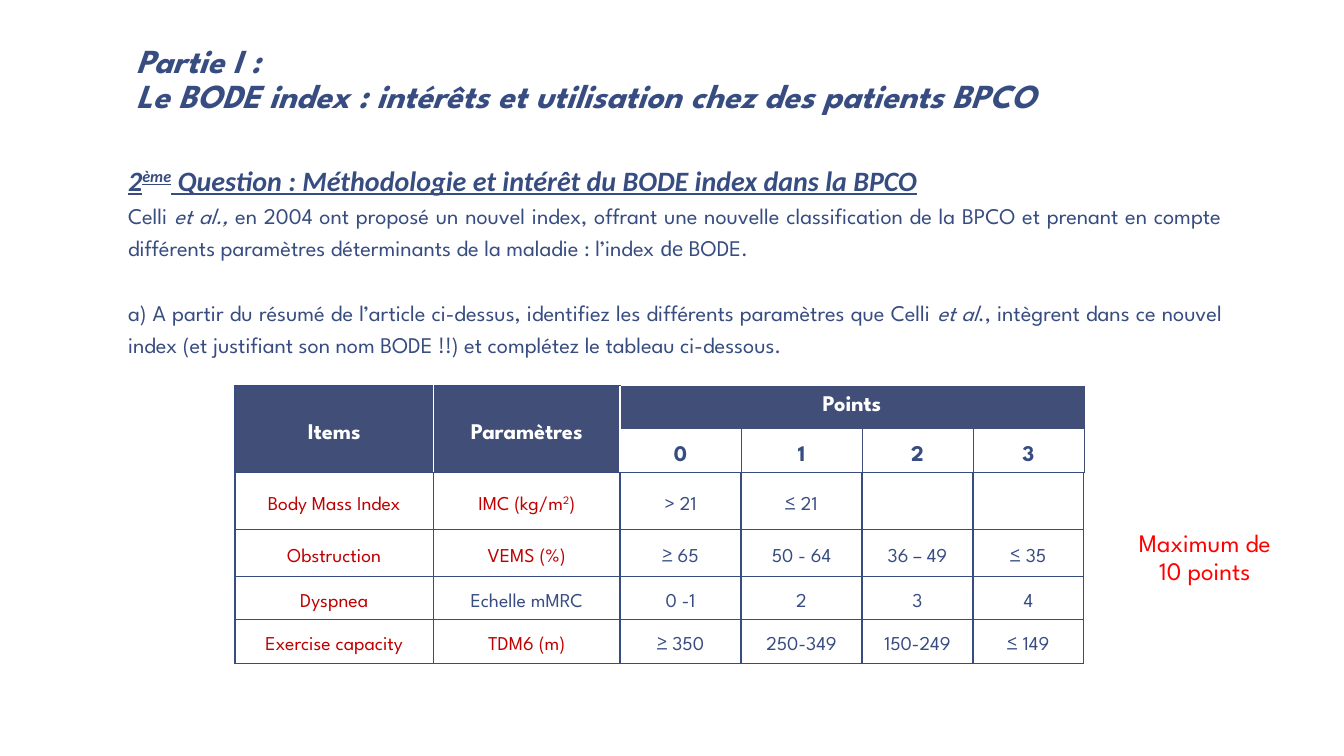
from dataclasses import dataclass

from lxml import etree
from pptx import Presentation
from pptx.dml.color import RGBColor
from pptx.enum.text import MSO_ANCHOR, PP_ALIGN
from pptx.oxml.ns import qn
from pptx.util import Inches, Pt

CENTER, JUSTIFY = PP_ALIGN.CENTER, PP_ALIGN.JUSTIFY
MIDDLE, TOP, BOTTOM = MSO_ANCHOR.MIDDLE, MSO_ANCHOR.TOP, MSO_ANCHOR.BOTTOM


@dataclass(frozen=True)
class Theme:
    font: str = "League Spartan"
    alt_font: str = "Calibri"
    navy: str = "374C81"
    header: str = "414E77"
    white: str = "FFFFFF"
    answer: str = "C00000"
    note: str = "FF0000"
    title_size: int = 24
    question_size: int = 20
    text_size: int = 16
    cell_size: int = 14
    note_size: int = 18


T = Theme()


def write(p, parts, size, color, align=None, spacing=None, name=T.font, **style):
    """Fill a paragraph; each part is text, or (text, mark) with mark i, sup or alt."""
    p.alignment, p.line_spacing = align, spacing
    p.font.size, p.font.name = Pt(size), name
    p.font.color.rgb = RGBColor.from_string(color)
    for key, value in style.items():
        setattr(p.font, key, value)
    for part in parts:
        text, mark = (part, "") if isinstance(part, str) else part
        if "\v" in text:
            p.text = text
            continue
        r = p.add_run()
        r.text = text
        if mark == "i":
            r.font.italic = True
        elif mark == "alt":
            r.font.name = T.alt_font
        elif mark == "sup":
            r._r.get_or_add_rPr().set("baseline", "30000")


def add_text(s, left, top, width, height, anchor=TOP, inset=(0.13, 0.07)):
    tf = s.shapes.add_textbox(*map(Inches, (left, top, width, height))).text_frame
    tf.word_wrap, tf.vertical_anchor = True, anchor
    tf.margin_left = tf.margin_right = Inches(inset[0])
    tf.margin_top = tf.margin_bottom = Inches(inset[1])
    return tf


prs = Presentation()
prs.slide_width, prs.slide_height = Inches(13.33), Inches(7.5)
s = prs.slides.add_slide(prs.slide_layouts[6])

# Title
tf = add_text(s, 1.22, 0.36, 11.11, 0.85, BOTTOM)
write(tf.paragraphs[0],
      ["Partie I\u00a0: \vLe BODE index\u00a0: intérêts et utilisation chez des patients BPCO"],
      T.title_size, T.navy, spacing=0.85, bold=True, italic=True)

# Question
tf = add_text(s, 1.14, 1.55, 11.11, 5.35)
write(tf.paragraphs[0],
      ["2", ("ème", "sup"), " Question\u00a0: Méthodologie et intérêt du BODE index dans la BPCO"],
      T.question_size, T.navy, JUSTIFY, name=T.alt_font, bold=True, italic=True, underline=True)
question_text = [
    ["Celli ", ("et al.,", "i"),
     " en 2004 ont proposé un nouvel index, offrant une nouvelle classification de la BPCO "
     "et prenant en compte différents paramètres déterminants de la maladie\u00a0: l’index ",
     ("de", "alt"), " BODE."],
    ["a) A partir du résumé de l’article ci-dessus, identifiez les différents paramètres que Celli ",
     ("et al", "i"),
     "., intègrent dans ce nouvel index (et justifiant son nom BODE\u00a0!!) "
     "et complétez le tableau ci-dessous."],
]
for parts in question_text:
    p = tf.add_paragraph()
    write(p, parts, T.text_size, T.navy, JUSTIFY, 1.2)
p.space_before = Pt(23)

# BODE table
rows = [
    ["Items", "Paramètres", "Points", "", "", ""],
    ["", "", "0", "1", "2", "3"],
    ["Body Mass Index", "IMC (kg/m²)", "> 21", "≤ 21", "", ""],
    ["Obstruction", "VEMS (%)", "≥ 65", "50 - 64", "36 – 49", "≤ 35"],
    ["Dyspnea", "Echelle mMRC", "0 -1", "2", "3", "4"],
    ["Exercise capacity", "TDM6 (m)", "≥ 350", "250-349", "150-249", "≤ 149"],
]
rows[2][1] = ["IMC (kg/m", ("2", "sup"), ")"]
col_widths = [1.97, 1.85, 1.2, 1.2, 1.1, 1.1]
row_heights = [0.43, 0.43, 0.56, 0.47, 0.43, 0.43]
table = s.shapes.add_table(len(rows), len(col_widths), Inches(2.33), Inches(3.83),
                           Inches(sum(col_widths)), Inches(sum(row_heights))).table
table.first_row = table.horz_banding = False
for col, width in zip(table.columns, col_widths):
    col.width = Inches(width)
for row, height in zip(table.rows, row_heights):
    row.height = Inches(height)
table.cell(0, 0).merge(table.cell(1, 0))
table.cell(0, 1).merge(table.cell(1, 1))
table.cell(0, 2).merge(table.cell(0, 5))

navy_line, white_line, thin_line = (T.navy, 1), (T.white, 1), (T.header, 0.5)
for i, row in enumerate(rows):
    for j, content in enumerate(row):
        cell = table.cell(i, j)
        heading = i < 2
        dark = i == 0 or (heading and j < 2)
        cell.margin_left = cell.margin_right = Inches(0.07)
        cell.margin_top = cell.margin_bottom = 0
        cell.vertical_anchor = TOP if (i, j) == (0, 2) else MIDDLE

        edges = dict.fromkeys(("lnL", "lnR", "lnT", "lnB"), navy_line)
        if heading and j < 2:
            edges["lnR"] = white_line
            if j == 1:
                edges["lnL"] = white_line
        elif heading:
            edges["lnL"] = white_line if j == 2 else thin_line
            edges["lnR"] = thin_line
            edges["lnT"] = thin_line if i == 0 else white_line
            edges["lnB"] = white_line if i == 0 else navy_line
        tcPr = cell._tc.get_or_add_tcPr()
        for tag, (color, width) in edges.items():
            ln = etree.SubElement(tcPr, qn("a:" + tag), w=str(Pt(width)))
            fill = etree.SubElement(ln, qn("a:solidFill"))
            etree.SubElement(fill, qn("a:srgbClr"), val=color)
        if dark:
            cell.fill.solid()
            cell.fill.fore_color.rgb = RGBColor.from_string(T.header)
        else:
            cell.fill.background()

        is_answer = not heading and j < 2 and content != "Echelle mMRC"
        color = T.white if dark else T.answer if is_answer else T.navy
        parts = content if isinstance(content, list) else [content] if content else []
        write(cell.text_frame.paragraphs[0], parts, T.text_size if heading else T.cell_size,
              color, CENTER, 1.5, bold=heading)

# Maximum score
tf = add_text(s, 11.01, 5.2, 1.88, 0.68, inset=(0.1, 0.05))
write(tf.paragraphs[0], ["Maximum de"], T.note_size, T.note, CENTER, 0.95)
write(tf.add_paragraph(), ["10 points"], T.note_size, T.note, CENTER, 0.95)

prs.save("out.pptx")
